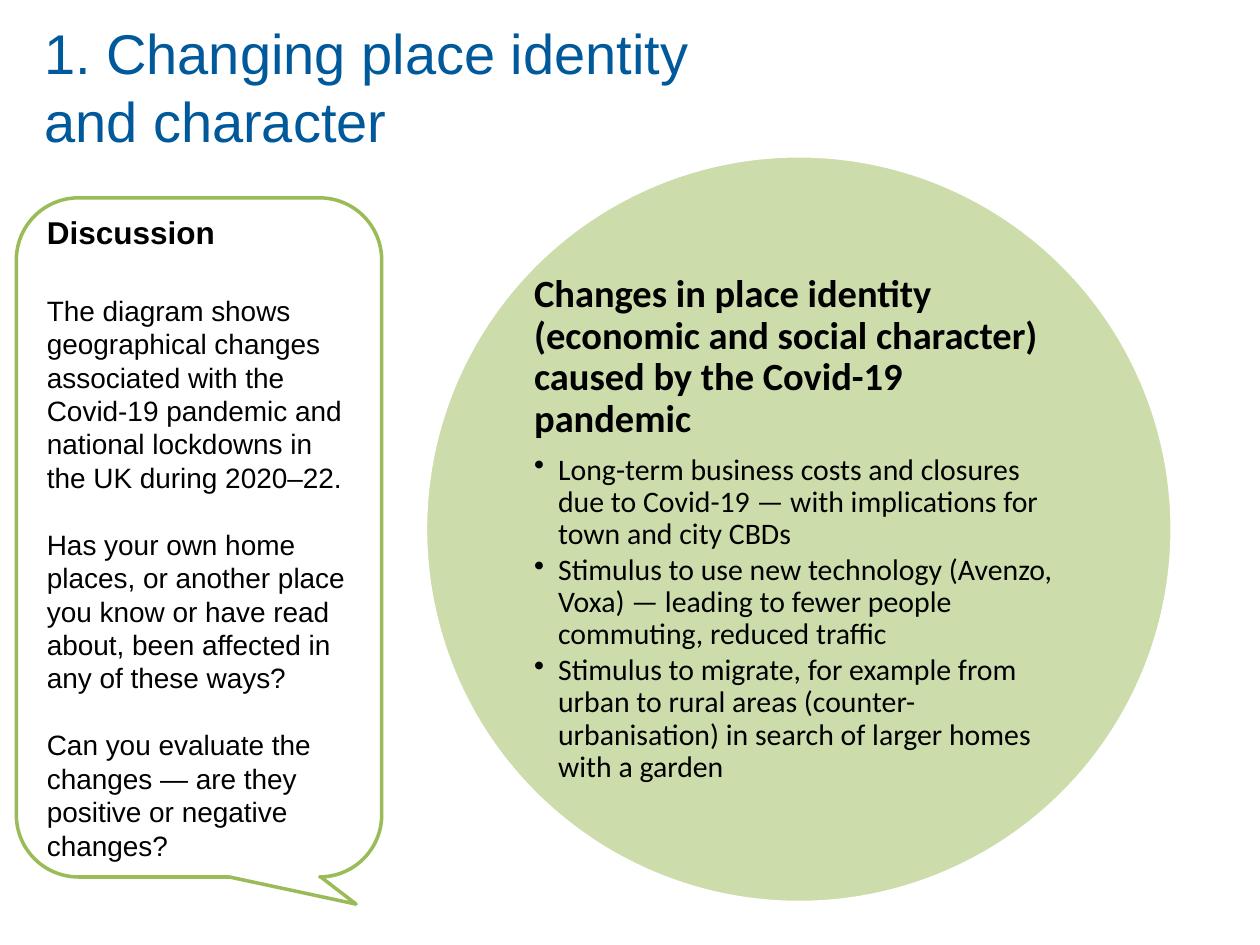
from pptx import Presentation
from pptx.dml.color import RGBColor as RGB
from pptx.enum.shapes import MSO_SHAPE as Shape
from pptx.enum.text import MSO_ANCHOR as Anchor, PP_ALIGN as Align
from pptx.oxml.ns import qn
from pptx.util import Inches, Pt
from lxml.etree import SubElement

# Content
TITLE = "1. Changing place identity and character"
HEAD = ("Changes in place identity (economic and social character) "
        "caused by the Covid-19 pandemic")
POINTS = [
    "Long-term business costs and closures due to Covid-19 — with "
    "implications for town and city CBDs",
    "Stimulus to use new technology (Avenzo, Voxa) — leading to fewer "
    "people commuting, reduced traffic",
    "Stimulus to migrate, for example from urban to rural areas "
    "(counter-urbanisation) in search of larger homes with a garden",
]
TALK = "Discussion"
ASKS = [
    "The diagram shows geographical changes associated with the Covid-19 "
    "pandemic and national lockdowns in the UK during 2020–22.",
    "Has your own home places, or another place you know or have read "
    "about, been affected in any of these ways?",
    "Can you evaluate the changes — are they positive or negative changes?",
]

# Formats
HEX = {"blue": "00599A", "green": "9BBB59", "white": "FFFFFF", "black": "000000"}
COLOR = {name: RGB.from_string(code) for name, code in HEX.items()}
TITLE_FONT = {"name": "Arial", "size": Pt(32), "bold": False}
HEAD_FONT = {"name": "Calibri", "size": Pt(22), "bold": True}
POINT_FONT = {"name": "Calibri", "size": Pt(17), "bold": False}
TALK_FONT = {"name": "Arial", "size": Pt(18), "bold": True}
ASK_FONT = {"name": "Arial", "size": Pt(16), "bold": False}
LINE = Pt(19.1)


def add_para(frame, text, font, color="black", bullet=False, **form):
    """Write text in the first paragraph while empty, else in a new one."""
    para = frame.paragraphs[0]
    if para.runs:
        para = frame.add_paragraph()
    if bullet:
        props = para._p.get_or_add_pPr()
        props.set("marL", str(Inches(0.19)))
        props.set("indent", str(Inches(-0.19)))
        SubElement(props, qn("a:buChar")).set("char", "•")
    for key, val in {"alignment": Align.LEFT, **form}.items():
        setattr(para, key, val)
    run = para.add_run()
    run.text = text
    for key, val in font.items():
        setattr(run.font, key, val)
    run.font.color.rgb = COLOR[color]


def set_frame(frame, **form):
    frame.word_wrap = True
    frame.vertical_anchor = Anchor.MIDDLE
    for key, val in form.items():
        setattr(frame, "margin_" + key, Inches(val))


def add_shape(slide, kind, box, fill, line, width):
    shape = slide.shapes.add_shape(kind, *map(Inches, box))
    shape.shadow.inherit = False
    shape.fill.solid()
    shape.fill.fore_color.rgb = COLOR[fill]
    shape.line.color.rgb = COLOR[line]
    shape.line.width = Pt(width)
    return shape


def main():
    deck = Presentation()
    deck.slide_width, deck.slide_height = Inches(10), Inches(7.5)
    slide = deck.slides.add_slide(deck.slide_layouts[5])

    # Title, set in the upper part of its box
    title = slide.shapes.title
    title.left, title.top = Inches(0.35), Inches(0.3)
    title.width, title.height = Inches(5.82), Inches(1.3)
    set_frame(title.text_frame, left=0, top=0, right=0, bottom=0.54)
    add_para(title.text_frame, TITLE, TITLE_FONT, "blue", line_spacing=Pt(38.9))

    # Circle of changes
    circle = add_shape(slide, Shape.OVAL, (3.37, 1.23, 5.94, 5.94),
                       "green", "white", 3)
    tint = circle.fill._xPr.find(qn("a:solidFill"))[0]
    SubElement(tint, qn("a:alpha")).set("val", "50000")
    frame = circle.text_frame
    set_frame(frame, left=0, top=0, right=0, bottom=0)
    add_para(frame, HEAD, HEAD_FONT, line_spacing=0.9, space_after=Pt(7.7))
    for text in POINTS:
        add_para(frame, text, POINT_FONT, bullet=True,
                 line_spacing=0.9, space_after=Pt(2.25))

    # Discussion callout
    call = add_shape(slide, Shape.ROUNDED_RECTANGULAR_CALLOUT,
                     (0.13, 1.57, 2.9, 5.39), "white", "green", 2)
    for i, val in enumerate((0.43, 0.54, 0.17)):
        call.adjustments[i] = val
    frame = call.text_frame
    set_frame(frame)
    add_para(frame, TALK, TALK_FONT, line_spacing=Pt(21.6))
    for i, text in enumerate(ASKS):
        add_para(frame, text, ASK_FONT, line_spacing=LINE,
                 space_before=LINE if i else Pt(24.3))

    deck.save("out.pptx")


if __name__ == "__main__":
    main()
